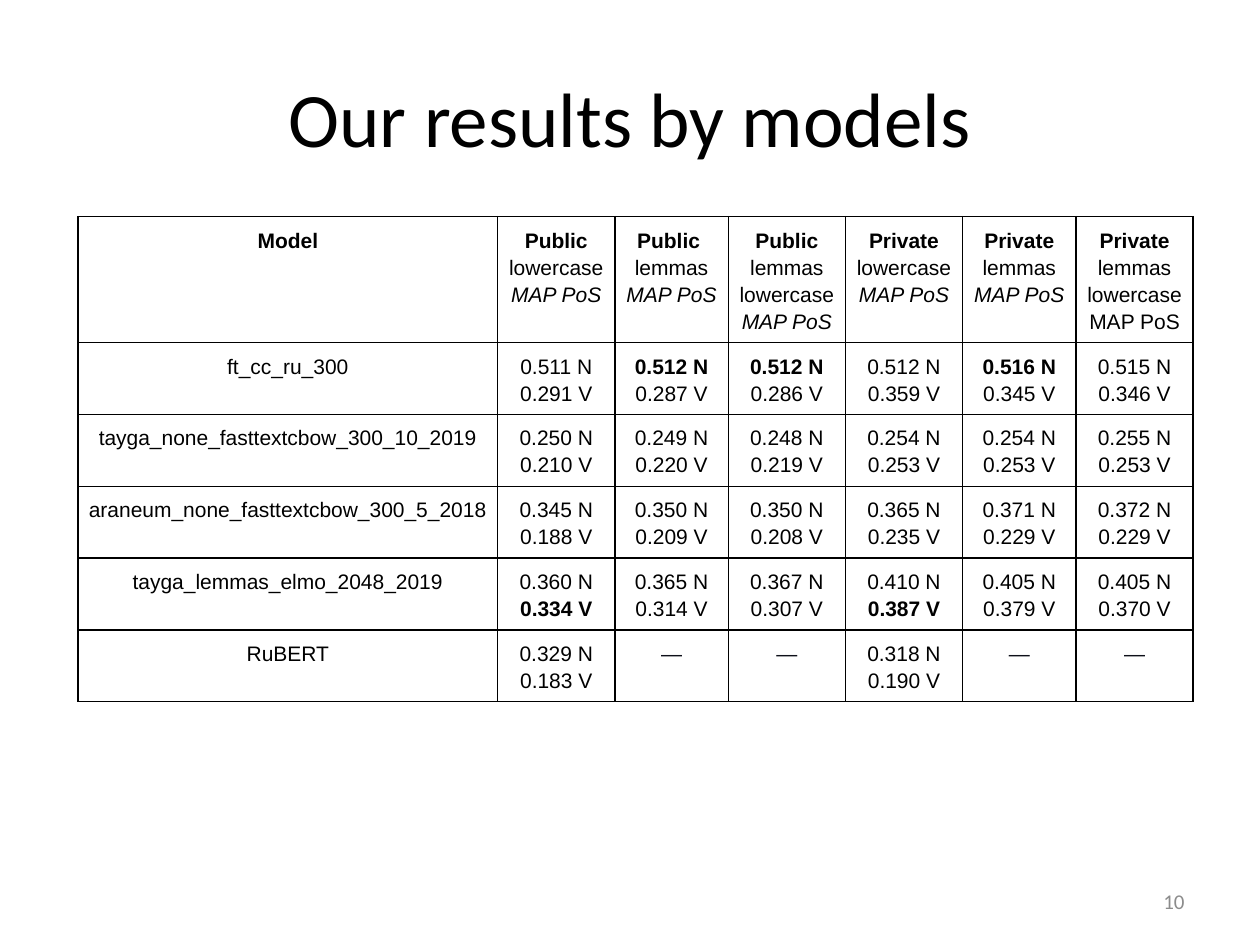
from lxml import etree
from pptx import Presentation
from pptx.dml.color import RGBColor
from pptx.enum.text import MSO_ANCHOR, PP_ALIGN
from pptx.oxml.ns import qn
from pptx.util import Inches, Pt

CENTER, RIGHT = PP_ALIGN.CENTER, PP_ALIGN.RIGHT
MIDDLE = MSO_ANCHOR.MIDDLE
TITLE_ONLY = 5

COLORS = {"text": "000000", "border": "000000", "dash": "0E101A", "number": "8C8C8C"}
BOLD, ITALIC = "*", "/"  # prefixes marking the style of a table line
DASH = "—"

MODEL_W, WIDE, NARROW = 3.33, 0.93, 0.9
COL_WIDTHS = [MODEL_W] + [WIDE, NARROW, WIDE] * 2
HEADER_H, ROW_H = 1, 0.57
CELL_INSET = 0.07

HEADER = [
    "*Model",
    "*Public|lowercase|/MAP PoS",
    "*Public |lemmas|/MAP PoS",
    "*Public|lemmas|lowercase|/MAP PoS",
    "*Private|lowercase|/MAP PoS",
    "*Private|lemmas|/MAP PoS",
    "*Private|lemmas|lowercase|MAP PoS",
]
RESULTS = [
    ["ft_cc_ru_300", "0.511 N|0.291 V", "*0.512 N|0.287 V", "*0.512 N|0.286 V",
     "0.512 N|0.359 V", "*0.516 N|0.345 V", "0.515 N|0.346 V"],
    ["tayga_none_fasttextcbow_300_10_2019", "0.250 N|0.210 V", "0.249 N|0.220 V",
     "0.248 N|0.219 V", "0.254 N|0.253 V", "0.254 N|0.253 V", "0.255 N|0.253 V"],
    ["araneum_none_fasttextcbow_300_5_2018", "0.345 N|0.188 V", "0.350 N|0.209 V",
     "0.350 N|0.208 V", "0.365 N|0.235 V", "0.371 N|0.229 V", "0.372 N|0.229 V"],
    ["tayga_lemmas_elmo_2048_2019", "0.360 N|*0.334 V", "0.365 N|0.314 V",
     "0.367 N|0.307 V", "0.410 N|*0.387 V", "0.405 N|0.379 V", "0.405 N|0.370 V"],
    ["RuBERT", "0.329 N|0.183 V", DASH, DASH, "0.318 N|0.190 V", DASH, DASH],
]


def add_run(p, text, font, size, color, bold=False, italic=False):
    r = p.add_run()
    r.text = text
    r.font.name = font
    r.font.size = Pt(size)
    r.font.bold = bold
    r.font.italic = italic
    r.font.color.rgb = RGBColor.from_string(COLORS[color])


def set_title(slide, text):
    sp = slide.shapes.title
    sp.left, sp.top, sp.width, sp.height = map(Inches, (0.5, 0.3, 9, 1.25))
    tf = sp.text_frame
    tf.vertical_anchor = MIDDLE
    p = tf.paragraphs[0]
    p.alignment = CENTER
    add_run(p, text, "Calibri", 44, "text")


def set_borders(cell, width=1):
    tc_pr = cell._tc.get_or_add_tcPr()
    for i, side in enumerate(("a:lnL", "a:lnR", "a:lnT", "a:lnB")):
        ln = etree.Element(qn(side), w=str(Pt(width)))
        fill = etree.SubElement(ln, qn("a:solidFill"))
        etree.SubElement(fill, qn("a:srgbClr"), val=COLORS["border"])
        tc_pr.insert(i, ln)


def fill_cell(cell, content):
    """Write the lines of content, split at bars, as centred paragraphs."""
    cell.margin_left = cell.margin_right = Inches(CELL_INSET)
    cell.margin_top = cell.margin_bottom = Inches(CELL_INSET)
    cell.fill.background()
    set_borders(cell)
    tf = cell.text_frame
    for i, line in enumerate(content.split("|")):
        p = tf.add_paragraph() if i else tf.paragraphs[0]
        p.alignment = CENTER
        p.line_spacing = 1.15
        add_run(p, line.lstrip(BOLD + ITALIC), "Arial", 12,
                "dash" if line == DASH else "text",
                line.startswith(BOLD), line.startswith(ITALIC))


def add_results_table(slide, left, top):
    rows = [HEADER] + RESULTS
    heights = [HEADER_H] + [ROW_H] * len(RESULTS)
    frame = slide.shapes.add_table(
        len(rows), len(COL_WIDTHS), Inches(left), Inches(top),
        Inches(sum(COL_WIDTHS)), Inches(sum(heights)))
    table = frame.table
    table.first_row = table.horz_banding = False
    for column, width in zip(table.columns, COL_WIDTHS):
        column.width = Inches(width)
    for row, height, contents in zip(table.rows, heights, rows):
        row.height = Inches(height)
        for cell, content in zip(row.cells, contents):
            fill_cell(cell, content)


def add_page_number(slide, number):
    sp = slide.shapes.add_textbox(*map(Inches, (7.17, 6.95, 2.33, 0.4)))
    tf = sp.text_frame
    tf.word_wrap = True
    tf.vertical_anchor = MIDDLE
    p = tf.paragraphs[0]
    p.alignment = RIGHT
    add_run(p, number, "Calibri", 12, "number")


def main():
    prs = Presentation()
    prs.slide_width, prs.slide_height = Inches(10), Inches(7.5)
    slide = prs.slides.add_slide(prs.slide_layouts[TITLE_ONLY])
    set_title(slide, "Our results by models")
    add_results_table(slide, 0.62, 1.72)
    add_page_number(slide, "10")
    prs.save("out.pptx")


if __name__ == "__main__":
    main()
